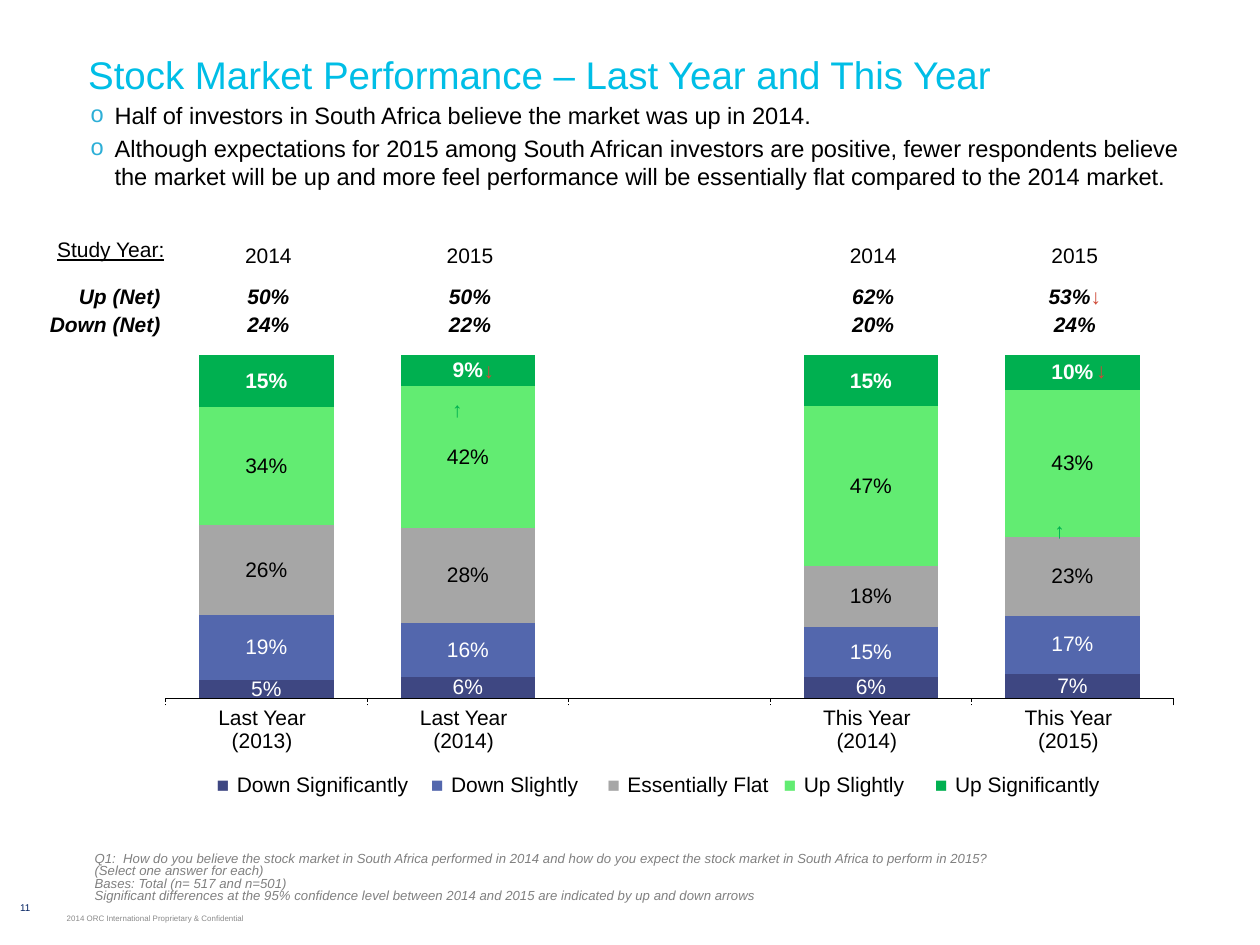
from lxml import etree
from pptx import Presentation
from pptx.chart.data import CategoryChartData
from pptx.dml.color import RGBColor
from pptx.enum.chart import XL_CHART_TYPE, XL_LABEL_POSITION, XL_TICK_LABEL_POSITION, XL_TICK_MARK
from pptx.enum.text import MSO_ANCHOR, MSO_AUTO_SIZE, PP_ALIGN
from pptx.oxml.ns import qn
from pptx.util import Inches, Pt

LEFT, MID, RIGHT = PP_ALIGN.LEFT, PP_ALIGN.CENTER, PP_ALIGN.RIGHT
TOP, HALF, LOW = MSO_ANCHOR.TOP, MSO_ANCHOR.MIDDLE, MSO_ANCHOR.BOTTOM
STACK = XL_CHART_TYPE.COLUMN_STACKED_100
FONT = "Arial"
BLACK, RED, GREEN = "000000", "CF4936", "00B050"
WIDE, HIGH = Inches(10), Inches(7.5)
COLS, ROWS = 200, 150
SERIES = [
    ("Down Significantly", "3E4782", "FFFFFF", (0.05, 0.06, None, 0.06, 0.07)),
    ("Down Slightly", "5367AD", "FFFFFF", (0.19, 0.16, None, 0.15, 0.17)),
    ("Essentially Flat", "A6A6A6", BLACK, (0.26, 0.28, None, 0.18, 0.23)),
    ("Up Slightly", "62EC72", BLACK, (0.34, 0.42, None, 0.47, 0.43)),
    ("Up Significantly", GREEN, "FFFFFF", (0.15, 0.09, None, 0.15, 0.1)),
]


def hue(code):
    return RGBColor.from_string(code)


def across(n):
    return int(WIDE * n / COLS)


def down(n):
    return int(HIGH * n / ROWS)


def place(box):
    x, y, w, h = box
    return across(x), down(y), across(w), down(h)


def style(font, size, color=BLACK, bold=False, slant=False):
    font.name, font.size = FONT, Pt(size)
    font.bold, font.italic = bold, slant
    font.color.rgb = hue(color)


def add_run(para, text, size, color=BLACK, bold=False, slant=False):
    run = para.add_run()
    run.text = text
    style(run.font, size, color, bold, slant)
    return run


def inset(item, side, edge):
    item.margin_left = item.margin_right = Inches(side)
    item.margin_top = item.margin_bottom = Inches(edge)


def add_text(slide, box, lines, size, color=BLACK, slant=False, bold=False,
             align=LEFT, anchor=TOP, pad=(0.1, 0.05), wrap=True):
    frame = slide.shapes.add_textbox(*place(box)).text_frame
    frame.word_wrap = wrap
    frame.vertical_anchor = anchor
    inset(frame, *pad)
    for i, line in enumerate(lines):
        para = frame.paragraphs[0] if i == 0 else frame.add_paragraph()
        para.alignment = align
        add_run(para, line, size, color, bold, slant)
    return frame


def add_title(slide, box, text):
    title = slide.shapes.title
    title.left, title.top, title.width, title.height = place(box)
    frame = title.text_frame
    frame.auto_size = MSO_AUTO_SIZE.NONE
    frame.vertical_anchor = HALF
    frame.paragraphs[0].alignment = LEFT
    add_run(frame.paragraphs[0], text, 22, "00BEE6")


def add_points(slide, box, lines):
    frame = add_text(slide, box, lines, 13.5, pad=(0.05, 0.05))
    for i, para in enumerate(frame.paragraphs):
        props = para._p.get_or_add_pPr()
        props.set("marL", str(Inches(0.19)))
        props.set("indent", str(-Inches(0.19)))
        tint = etree.SubElement(props, qn("a:buClr"))
        etree.SubElement(tint, qn("a:srgbClr"), val="2DAFD7")
        etree.SubElement(props, qn("a:buFont"), typeface=FONT)
        etree.SubElement(props, qn("a:buChar"), char="o")
        if i:
            para.space_before = Pt(2.7)


def add_notes(slide, box, lines):
    frame = add_text(slide, box, lines, 7.5, "808080", slant=True,
                     anchor=LOW, pad=(0.01, 0.05))
    for para in frame.paragraphs:
        para.line_spacing = 0.8


def fill_cell(cell, lines, align, bold, space):
    cell.fill.background()
    cell.vertical_anchor = HALF
    inset(cell, 0.01, 0.01)
    frame = cell.text_frame
    for i, runs in enumerate(lines or [[]]):
        para = frame.paragraphs[0] if i == 0 else frame.add_paragraph()
        para.alignment = align
        para.line_spacing = space
        for text, color in runs:
            add_run(para, text, 12, color, bold, bold and color == BLACK)
        if not runs:
            etree.SubElement(para._p, qn("a:endParaRPr"), sz="1200")


def add_grid(slide, box, spans, rows, aligns, bold=False, space=1.0):
    table = slide.shapes.add_table(len(rows), len(spans), *place(box)).table
    table.first_row = table.horz_banding = False
    for col, span in zip(table.columns, spans):
        col.width = across(span)
    for r, row in enumerate(rows):
        table.rows[r].height = down(box[3] / len(rows))
        for c, lines in enumerate(row):
            fill_cell(table.cell(r, c), lines, aligns[c], bold, space)


def plain(*lines):
    return [[(line, BLACK)] for line in lines]


def add_years(slide, box):
    row = [plain("2014"), plain("2015"), [], plain("2014"), plain("2015")]
    add_grid(slide, box, [box[2] / 5] * 5, [row], [MID] * 5)


def add_cats(slide, box):
    row = [plain("Last Year", "(2013)"), plain("Last Year", "(2014)"), [],
           plain("This Year", "(2014)"), plain("This Year", "(2015)")]
    add_grid(slide, box, [box[2] / 5] * 5, [row], [MID] * 5)


def add_nets(slide, box):
    head = 23.2
    ups = [plain("Up (Net) "), plain("50%"), plain("50%"), [], plain("62%"),
           [[("53%", BLACK), ("↓", RED)]]]
    downs = [plain("Down (Net) "), plain("24%"), plain("22%"), [],
             plain("20%"), plain("24%")]
    add_grid(slide, box, [head] + [(box[2] - head) / 5] * 5, [ups, downs],
             [RIGHT] + [MID] * 5, bold=True, space=0.85)


def add_legend(slide, box):
    spans, row = [], []
    for (name, color, _, _), width in zip(SERIES, (30, 24, 24, 20, 26)):
        spans += [4, width]
        row += [[[("■", color)]], plain(name)]
    add_grid(slide, box, spans, [row], [MID, LEFT] * len(SERIES))


def set_plot(chart, x, y, w, h):
    area = chart._chartSpace.chart.plotArea
    for old in area.findall(qn("c:layout")):
        area.remove(old)
    layout = etree.Element(qn("c:layout"))
    area.insert(0, layout)
    manual = etree.SubElement(layout, qn("c:manualLayout"))
    parts = [("layoutTarget", "inner"), ("xMode", "edge"), ("yMode", "edge"),
             ("x", x), ("y", y), ("w", w), ("h", h)]
    for tag, val in parts:
        etree.SubElement(manual, qn("c:" + tag), val=str(val))


def add_bars(slide, box):
    data = CategoryChartData(number_format="0%")
    data.categories = ["1", "2", "3", "4", "5"]
    for name, _, _, vals in SERIES:
        data.add_series(name, vals)
    chart = slide.shapes.add_chart(STACK, *place(box), data).chart
    chart.has_legend = chart.has_title = False
    style(chart.font, 12)
    set_plot(chart, 0.04, 0.05, 0.93, 0.9)
    plot = chart.plots[0]
    plot.gap_width, plot.overlap = 50, 100
    plot.vary_by_categories = False
    base = chart.category_axis
    base.tick_label_position = XL_TICK_LABEL_POSITION.NONE
    base.major_tick_mark = XL_TICK_MARK.OUTSIDE
    base.format.line.color.rgb = hue(BLACK)
    base.format.line.width = Pt(0.25)
    scale = chart.value_axis
    scale.visible = scale.has_major_gridlines = False
    scale.minimum_scale, scale.maximum_scale, scale.major_unit = 0, 1, 0.25
    for series, (name, color, ink, _) in zip(plot.series, SERIES):
        series.format.fill.solid()
        series.format.fill.fore_color.rgb = hue(color)
        labels = series.data_labels
        labels.show_value = True
        labels.number_format, labels.number_format_is_linked = "0%", False
        labels.position = XL_LABEL_POSITION.CENTER
        style(labels.font, 12, ink, bold=name == "Up Significantly")


def add_marks(slide, size):
    marks = [("↓", RED, 74.8, 55.8), ("↑", GREEN, 69.8, 62),
             ("↑", GREEN, 165.4, 81.2), ("↓", RED, 172, 55.8)]
    for sign, color, x, y in marks:
        add_text(slide, (x, y, *size), [sign], 12, color, bold=True, wrap=False)


def main():
    deck = Presentation()
    deck.slide_width, deck.slide_height = WIDE, HIGH
    slide = deck.slides.add_slide(deck.slide_layouts[5])
    add_text(slide, (0, 140, 8, 8), ["11"], 5.6, "002060", align=MID,
             anchor=HALF, pad=(0, 0.03))
    add_text(slide, (10.6, 143.8, 51.4, 4),
             ["2014 ORC International Proprietary & Confidential"], 4.5,
             "898989", anchor=HALF, pad=(0, 0.03))
    add_title(slide, (12, 5, 180, 13.4),
              "Stock Market Performance – Last Year and This Year")
    add_notes(slide, (14.8, 135.8, 155.8, 8.6), [
        "Q1:  How do you believe the stock market in South Africa performed in 2014 "
        "and how do you expect the stock market in South Africa to perform in 2015?",
        "(Select one answer for each)",
        "Bases: Total (n= 517 and n=501)",
        "Significant differences at the 95% confidence level between 2014 and 2015 "
        "are indicated by up and down arrows"])
    add_bars(slide, (19.4, 53.4, 172, 60.4))
    add_nets(slide, (3.4, 45.2, 183.2, 8))
    add_legend(slide, (33.4, 122.4, 144, 4.4))
    add_cats(slide, (25.6, 111.6, 160, 8.4))
    study = add_text(slide, (7, 36.6, 21.2, 6), ["Study Year:"], 12,
                     align=MID, wrap=False)
    study.paragraphs[0].runs[0].font.underline = True
    add_marks(slide, (7, 6))
    add_points(slide, (13.4, 15, 180, 108.4), [
        "Half of investors in South Africa believe the market was up in 2014.",
        "Although expectations for 2015 among South African investors are positive, "
        "fewer respondents believe the market will be up and more feel performance "
        "will be essentially flat compared to the 2014 market."])
    add_years(slide, (26.6, 38.4, 160, 4.4))
    deck.save("out.pptx")


if __name__ == "__main__":
    main()
